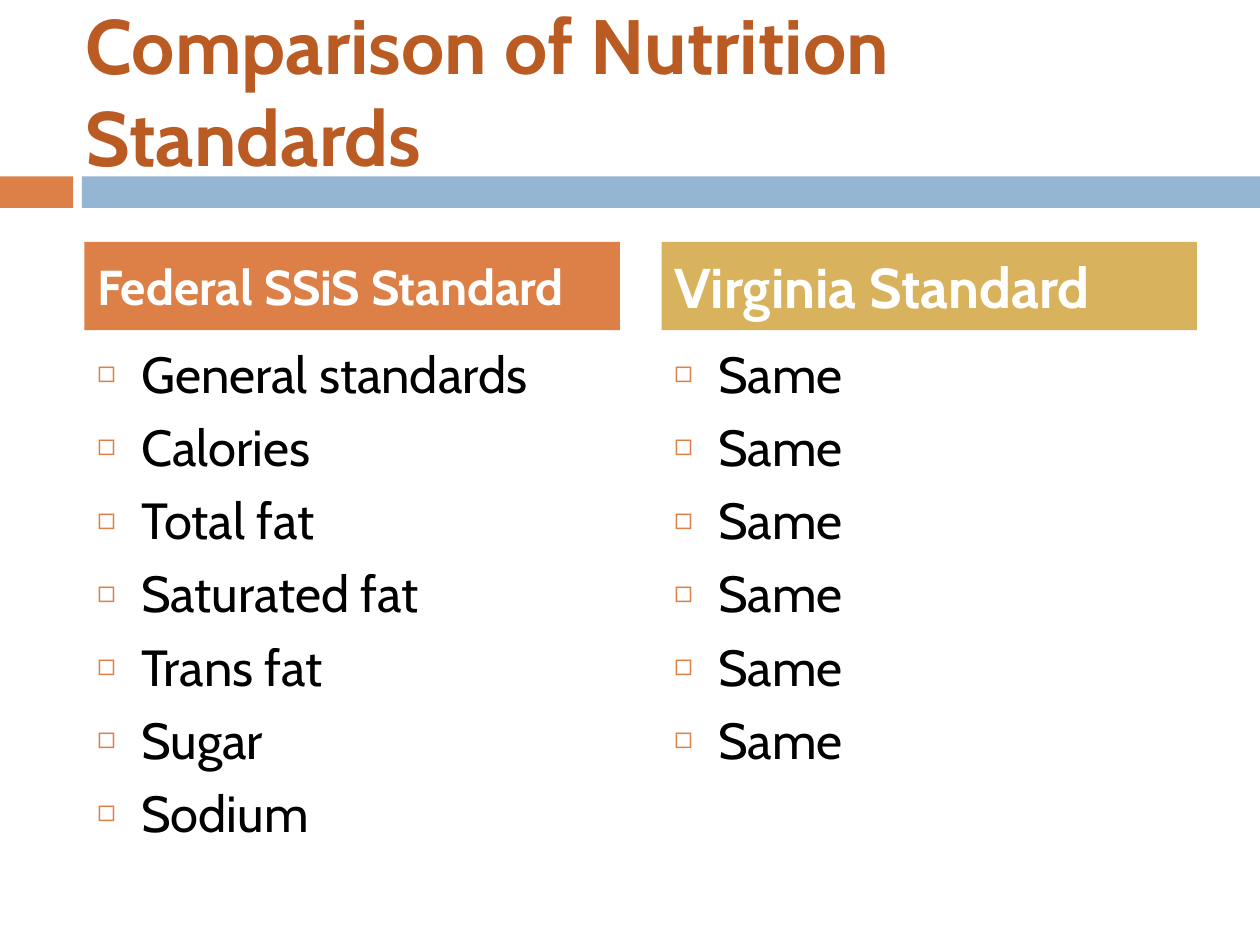
from lxml import etree
from pptx import Presentation
from pptx.dml.color import RGBColor
from pptx.enum.shapes import MSO_SHAPE
from pptx.enum.text import MSO_ANCHOR, MSO_AUTO_SIZE, PP_ALIGN
from pptx.oxml.ns import qn
from pptx.util import Inches, Pt

RECTANGLE = MSO_SHAPE.RECTANGLE
MIDDLE, TOP = MSO_ANCHOR.MIDDLE, MSO_ANCHOR.TOP
LEFT = PP_ALIGN.LEFT
NO_AUTOFIT = MSO_AUTO_SIZE.NONE
COMPARISON_LAYOUT = 4
FONT = "Cabin"
COLORS = {
    "orange": "DD8047",
    "blue": "94B6D2",
    "gold": "D8B25C",
    "rust": "B95B22",
    "white": "FFFFFF",
    "black": "000000",
}
COLUMN_WIDTH = 4.25
COLUMNS = [
    (0.67, "Federal SSiS Standard", 28, "orange",
     ["General standards", "Calories", "Total fat", "Saturated fat",
      "Trans fat", "Sugar", "Sodium"]),
    (5.25, "Virginia Standard", 32, "gold", ["Same"] * 6),
]


def paint(shape, color):
    shape.fill.solid()
    shape.fill.fore_color.rgb = RGBColor.from_string(COLORS[color])


def add_band(slide, left, width):
    band = slide.shapes.add_shape(
        RECTANGLE, Inches(left), Inches(1.4), Inches(width), Inches(0.25))
    band.shadow.inherit = False
    band.line.fill.background()
    return band


def place(placeholder, left, top, width, height, anchor):
    placeholder.left, placeholder.top = Inches(left), Inches(top)
    placeholder.width, placeholder.height = Inches(width), Inches(height)
    frame = placeholder.text_frame
    frame.word_wrap = True
    frame.auto_size = NO_AUTOFIT
    frame.vertical_anchor = anchor
    return frame


def write(paragraph, wording, size, color, bold=False, before=0):
    paragraph.alignment = LEFT
    paragraph.space_before = Pt(before)
    run = paragraph.add_run()
    run.text = wording
    run.font.name = FONT
    run.font.size = Pt(size)
    run.font.bold = bold
    run.font.color.rgb = RGBColor.from_string(COLORS[color])


def add_bullet(paragraph):
    properties = paragraph._p.get_or_add_pPr()
    properties.set("marL", str(Inches(0.35)))
    properties.set("indent", str(-Inches(0.35)))
    bullet_color = etree.SubElement(properties, qn("a:buClr"))
    etree.SubElement(bullet_color, qn("a:srgbClr"), val=COLORS["orange"])
    etree.SubElement(properties, qn("a:buSzPct"), val="60000")
    etree.SubElement(properties, qn("a:buChar"), char="◻")


def fill_title(title):
    frame = place(title, 0.58, 0.17, 9.17, 1.08, MIDDLE)
    write(frame.paragraphs[0], "Comparison of Nutrition Standards", 44, "rust", True)


def fill_heading(heading, left, wording, size, color):
    frame = place(heading, left, 1.92, COLUMN_WIDTH, 0.7, MIDDLE)
    paint(heading, color)
    write(frame.paragraphs[0], wording, size, "white", True, 7)


def fill_list(standards, left, items):
    frame = place(standards, left, 2.67, COLUMN_WIDTH, 3.92, TOP)
    for index, item in enumerate(items):
        paragraph = frame.add_paragraph() if index else frame.paragraphs[0]
        write(paragraph, item, 29, "black", before=7)
        add_bullet(paragraph)


def main():
    deck = Presentation()
    deck.slide_width, deck.slide_height = Inches(10), Inches(7.5)
    slide = deck.slides.add_slide(deck.slide_layouts[COMPARISON_LAYOUT])
    paint(add_band(slide, 0, 0.58), "orange")
    paint(add_band(slide, 0.65, 9.35), "blue")
    fill_title(slide.shapes.title)
    for column, (left, heading, size, color, items) in enumerate(COLUMNS):
        fill_heading(slide.placeholders[2 * column + 1], left, heading, size, color)
        fill_list(slide.placeholders[2 * column + 2], left, items)
    deck.save("out.pptx")


if __name__ == "__main__":
    main()
